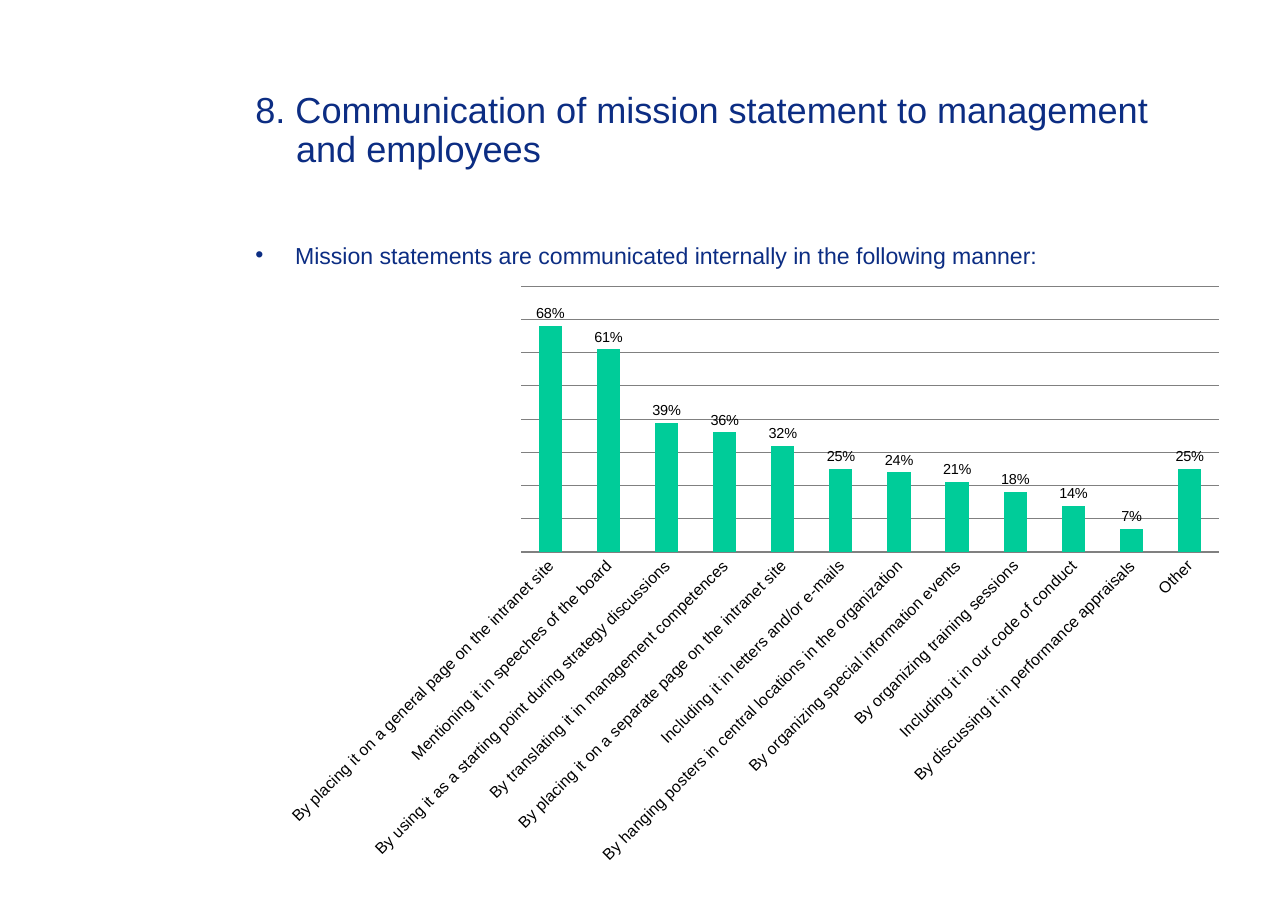
import pptx
import pptx.chart.data
import pptx.dml.color
import pptx.enum.chart
import pptx.enum.text
import pptx.oxml
import pptx.oxml.ns
import pptx.util

Pt = pptx.util.Pt
BLUE, GREEN, GREY, BLACK = "0C2D83", "00CC99", "808080", "000000"
FONT = "Arial"
LEFT, WIDTH = 169.5, 643.5

WAYS = {
    "By placing it on a general page on the intranet site": 0.68,
    "Mentioning it in speeches of the board": 0.61,
    "By using it as a starting point during strategy discussions": 0.39,
    "By translating it in management competences": 0.36,
    "By placing it on a separate page on the intranet site": 0.32,
    "Including it in letters and/or e-mails": 0.25,
    "By hanging posters in central locations in the organization": 0.24,
    "By organizing special information events": 0.21,
    "By organizing training sessions": 0.18,
    "Including it in our code of conduct": 0.14,
    "By discussing it in performance appraisals": 0.07,
    "Other": 0.25,
}


def color(target, value):
    """Set a colour format from a hex string."""
    target.rgb = pptx.dml.color.RGBColor.from_string(value)


def style(font, size, value):
    """Set the face, size and colour of a font."""
    font.name, font.size = FONT, Pt(size)
    color(font.color, value)


def write(shape, text, top, height, size, indent, spacing, after=0):
    """Place a placeholder and fill it with one hanging paragraph."""
    shape.left, shape.top = Pt(LEFT), Pt(top)
    shape.width, shape.height = Pt(WIDTH), Pt(height)
    frame = shape.text_frame
    frame.word_wrap = True
    frame.auto_size = pptx.enum.text.MSO_AUTO_SIZE.NONE
    frame.vertical_anchor = pptx.enum.text.MSO_ANCHOR.TOP
    line = frame.paragraphs[0]
    line.alignment = pptx.enum.text.PP_ALIGN.LEFT
    line.line_spacing = spacing
    line.space_before, line.space_after = Pt(0), Pt(after)
    props = line._p.get_or_add_pPr()
    props.set("marL", str(Pt(indent)))
    props.set("indent", str(-Pt(indent)))
    run = line.add_run()
    run.text = text
    style(run.font, size, BLUE)


def stroke(line, width):
    """Draw a line in grey."""
    color(line.color, GREY)
    line.width = Pt(width)


def layout(chart, x, y, w, h):
    """Fix the inner plot area as fractions of the chart."""
    area = chart._chartSpace.chart.plotArea
    for old in area.findall(pptx.oxml.ns.qn("c:layout")):
        area.remove(old)
    marks = [("layoutTarget", "inner"), ("xMode", "edge"), ("yMode", "edge"),
             ("x", x), ("y", y), ("w", w), ("h", h)]
    inner = "".join(f'<c:{name} val="{val}"/>' for name, val in marks)
    area.insert(0, pptx.oxml.parse_xml(
        f'<c:layout {pptx.oxml.ns.nsdecls("c")}>'
        f'<c:manualLayout>{inner}</c:manualLayout></c:layout>'))


def axes(chart):
    """Format the category and value axes."""
    kinds = pptx.enum.chart
    cat, val = chart.category_axis, chart.value_axis
    for axis in (cat, val):
        axis.major_tick_mark = axis.minor_tick_mark = kinds.XL_TICK_MARK.NONE
    style(cat.tick_labels.font, 11, BLACK)
    cat._element.txPr.bodyPr.set("rot", str(-45 * 60000))
    stroke(cat.format.line, 1.5)
    val.minimum_scale, val.maximum_scale, val.major_unit = 0, 0.8, 0.1
    val.tick_labels.number_format = "0.0%"
    val.tick_labels.number_format_is_linked = False
    val.tick_label_position = kinds.XL_TICK_LABEL_POSITION.NONE
    val.format.line.fill.background()
    val.has_major_gridlines = True
    stroke(val.major_gridlines.format.line, 0.75)


def bars(slide, left, top, width, height):
    """Add the column chart of communication ways."""
    kinds = pptx.enum.chart
    data = pptx.chart.data.CategoryChartData(number_format="0%")
    data.categories = list(WAYS)
    data.add_series("Series 1", list(WAYS.values()))
    chart = slide.shapes.add_chart(
        kinds.XL_CHART_TYPE.COLUMN_CLUSTERED,
        Pt(left), Pt(top), Pt(width), Pt(height), data).chart
    chart.has_title = chart.has_legend = False
    style(chart.font, 10, BLACK)
    layout(chart, 0.25, 0.025, 0.734, 0.345)
    axes(chart)
    plot = chart.plots[0]
    plot.gap_width, plot.vary_by_categories = 150, False
    fill = plot.series[0].format.fill
    fill.solid()
    color(fill.fore_color, GREEN)
    plot.has_data_labels = True
    labels = plot.data_labels
    labels.show_value = True
    labels.number_format, labels.number_format_is_linked = "0%", False
    labels.position = kinds.XL_LABEL_POSITION.OUTSIDE_END
    style(labels.font, 10, BLACK)


def main():
    """Build and save the slide."""
    deck = pptx.Presentation()
    deck.slide_width, deck.slide_height = Pt(891), Pt(630)
    slide = deck.slides.add_slide(deck.slide_layouts[1])
    write(slide.shapes.title,
          "8. Communication of mission statement to management and employees",
          60, 63, 25, 28.1, Pt(27))
    write(slide.placeholders[1],
          "Mission statements are communicated internally in the following manner:",
          144, 402, 16, 27.4, 2.0, after=7)
    bars(slide, 196.2, 184.7, 657.4, 532.8)
    deck.save("out.pptx")


if __name__ == "__main__":
    main()
